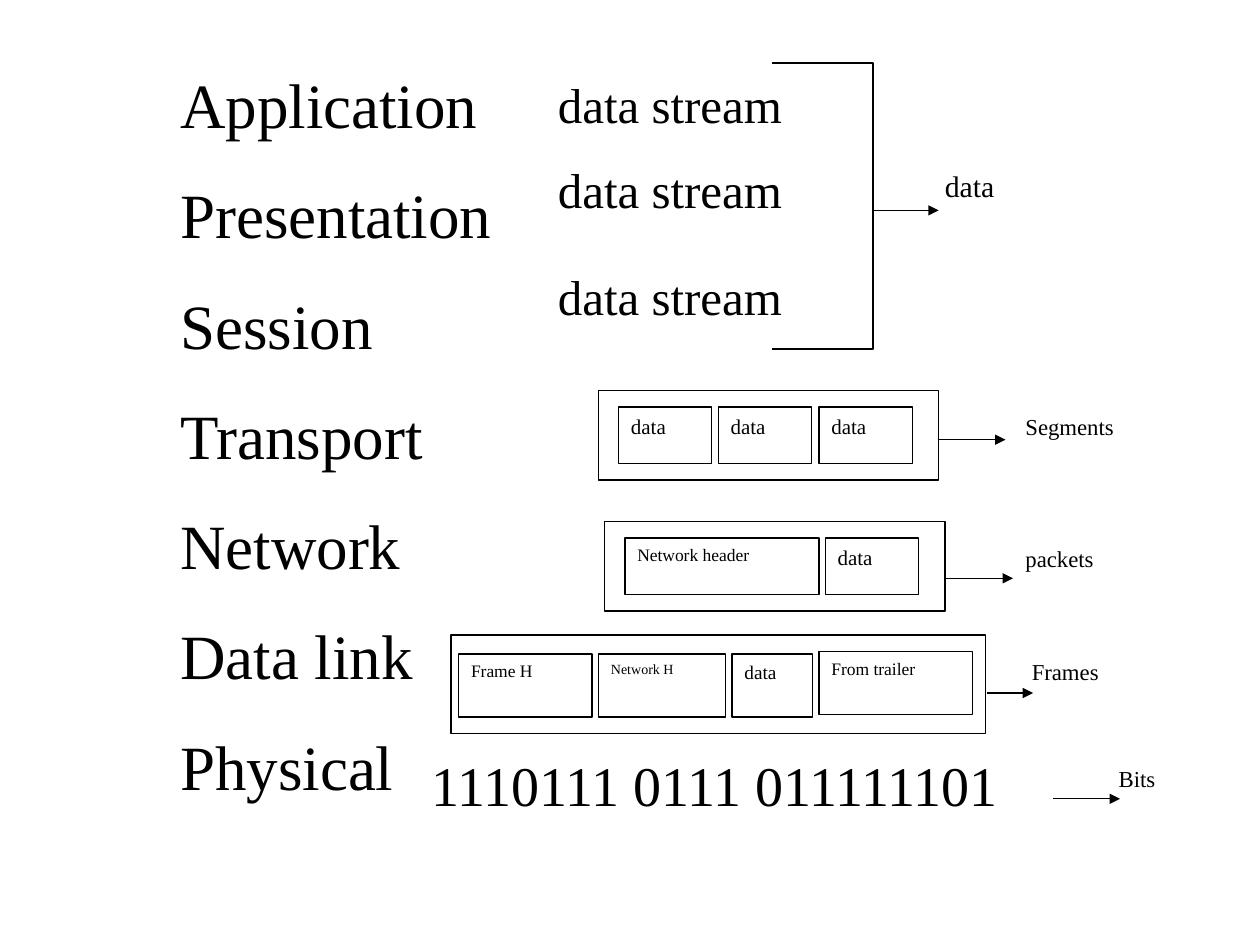
import pptx
import pptx.util
from pptx.dml.color import RGBColor
from pptx.enum.shapes import MSO_CONNECTOR, MSO_SHAPE
from pptx.enum.text import MSO_ANCHOR, MSO_AUTO_SIZE, PP_ALIGN
from pptx.oxml.ns import qn
from lxml import etree

Inches, Pt = pptx.util.Inches, pptx.util.Pt
FONT, BLACK, WHITE = "Times New Roman", "000000", "FFFFFF"

# Content: places are left, top, width, height in inches
LAYERS = ["Application", "Presentation", "Session", "Transport",
          "Network", "Data link", "Physical"]
STREAMS = ["data stream"] * 3
BITS = "1110111 0111 011111101"

# Outer box, then its fields: text, size, left, top, width, height
UNITS = [
    ((4.75, 3.1, 2.7, 0.71),
     [("data", 12, left, 3.23, 0.74, 0.45) for left in (4.91, 5.7, 6.5)]),
    ((4.8, 4.14, 2.7, 0.71),
     [("Network header", 10, 4.96, 4.27, 1.54, 0.45),
      ("data", 12, 6.55, 4.27, 0.74, 0.45)]),
    ((3.58, 5.04, 4.24, 0.78),
     [("Frame H", 10, 3.64, 5.19, 1.06, 0.5),
      ("Network H", 8, 4.75, 5.19, 1.01, 0.5),
      ("data", 11, 5.81, 5.19, 0.64, 0.5),
      ("From trailer", 10, 6.5, 5.17, 1.22, 0.5)]),
]

# Unit name, size, left, top; arrow start, end, height
OUTPUTS = [
    ("data", 17, 7.4, 1.28, 6.92, 7.45, 1.67),
    ("Segments", 13, 8.04, 3.23, 7.45, 7.98, 3.49),
    ("packets", 13, 8.04, 4.27, 7.51, 8.04, 4.59),
    ("Frames", 13, 8.09, 5.17, 7.83, 8.2, 5.5),
    ("Bits", 13, 8.78, 6.02, 8.36, 8.89, 6.34),
]

deck = pptx.Presentation()
deck.slide_width, deck.slide_height = Inches(10), Inches(7.5)
slide = deck.slides.add_slide(deck.slide_layouts[1])
shapes = slide.shapes


def color(target, value):
    target.rgb = RGBColor.from_string(value)


def write(shape, lines, size, gaps=None):
    """Fill a shape with lines; gaps are the points above each line."""
    frame = shape.text_frame
    frame.text = "\n".join(lines)
    frame.word_wrap = True
    frame.auto_size = MSO_AUTO_SIZE.NONE
    frame.vertical_anchor = MSO_ANCHOR.TOP
    for paragraph, gap in zip(frame.paragraphs, gaps or [0] * len(lines)):
        paragraph.alignment = PP_ALIGN.LEFT
        paragraph.space_before = Pt(gap)
        font = paragraph.runs[0].font
        font.name, font.size = FONT, Pt(size)
        color(font.color, BLACK)


def add_outline(kind, place, fill=None):
    shape = shapes.add_shape(kind, *map(Inches, place))
    shape.shadow.inherit = False
    shape.line.width = Pt(0.75)
    color(shape.line.color, BLACK)
    if fill:
        shape.fill.solid()
        color(shape.fill.fore_color, fill)
    else:
        shape.fill.background()
    return shape


def add_text(lines, size, place, gaps=None):
    write(shapes.add_textbox(*map(Inches, place)), lines, size, gaps)


def add_arrow(start, end, y):
    arrow = shapes.add_connector(MSO_CONNECTOR.STRAIGHT, Inches(start),
                                 Inches(y), Inches(end), Inches(y))
    arrow.line.width = Pt(0.75)
    color(arrow.line.color, BLACK)
    properties = arrow.line._get_or_add_ln()
    etree.SubElement(properties, qn("a:tailEnd"), type="triangle")
    etree.SubElement(arrow._element.spPr, qn("a:effectLst"))


# Layer list in the body placeholder, without bullets
title, layers = slide.placeholders
title._element.getparent().remove(title._element)
layers.left, layers.top = Inches(1.33), Inches(0.47)
layers.width, layers.height = Inches(2.83), Inches(6.06)
write(layers, LAYERS, 36, [0] + [19.8] * (len(LAYERS) - 1))
for layer in layers.text_frame.paragraphs:
    layer_format = layer._p.get_or_add_pPr()
    layer_format.set("marL", "0")
    layer_format.set("indent", "0")
    etree.SubElement(layer_format, qn("a:buNone"))

# Bracket around the data streams
bracket = add_outline(MSO_SHAPE.RIGHT_BRACKET, (6.13, 0.5, 0.8, 2.27))
bracket.adjustments[0] = 0
add_text(STREAMS, 28, (4.33, 0.54, 2.5, 2.13), [0, 15.2, 27.2])

# Segment, packet and frame boxes
for outer, fields in UNITS:
    add_outline(MSO_SHAPE.RECTANGLE, outer, WHITE)
    for text, size, *place in fields:
        write(add_outline(MSO_SHAPE.RECTANGLE, place), [text], size)

# Bit string
add_text([BITS], 32, (3.33, 5.91, 4.92, 0.63))

# Unit names with their arrows
for name, size, left, top, start, end, y in OUTPUTS:
    add_arrow(start, end, y)
    add_text([name], size, (left, top, 1.22, 0.65))

deck.save("out.pptx")
